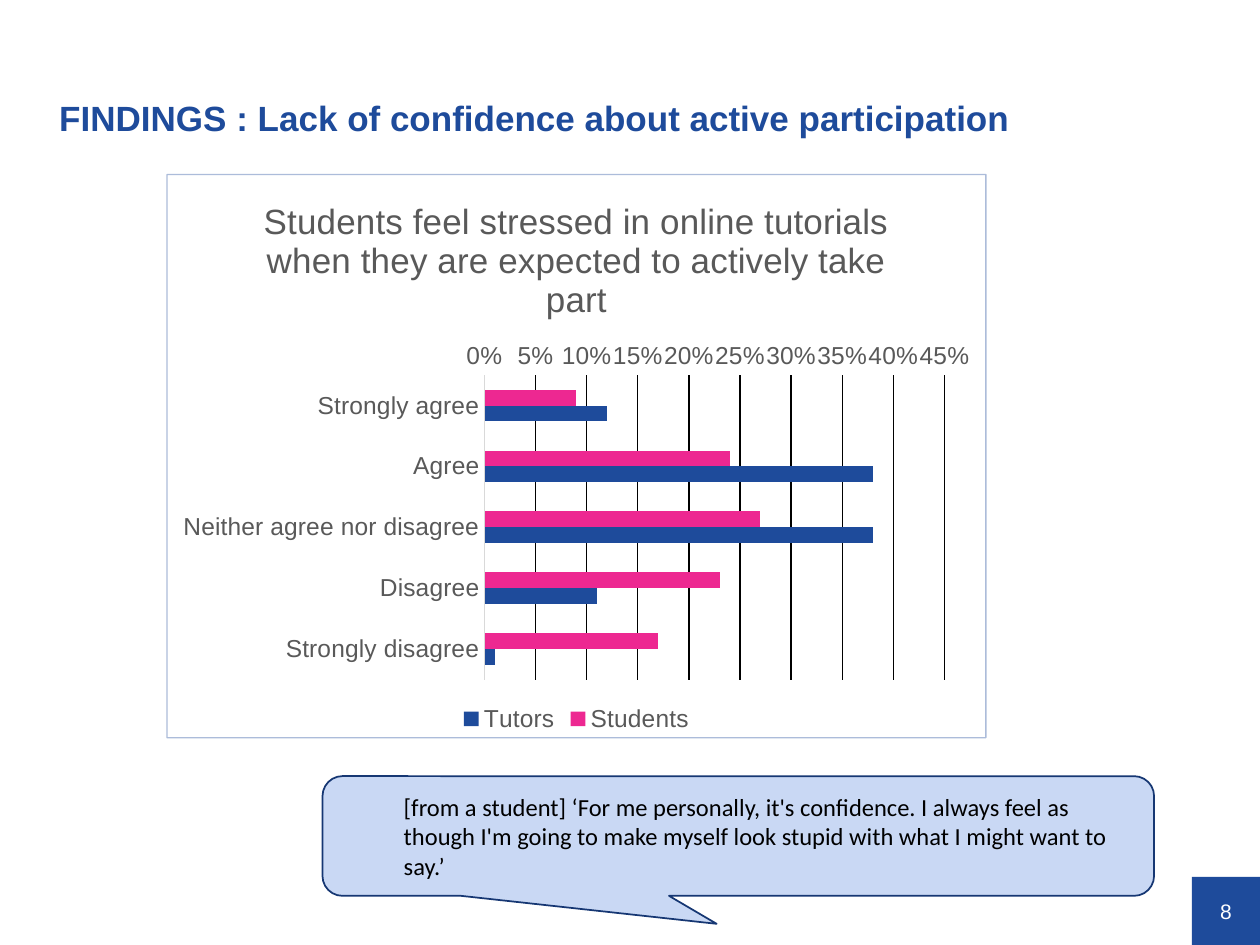
from lxml import etree
from pptx import Presentation
from pptx import util as u
from pptx.chart.data import CategoryChartData
from pptx.dml.color import RGBColor
from pptx.enum import chart as charts, shapes, text
from pptx.oxml import ns

COLORS = {
    "navy": "1E4B9B",
    "pink": "ED2891",
    "pale": "C9D8F4",
    "outline": "163773",
    "grey": "595959",
    "axis": "D9D9D9",
    "black": "000000",
    "white": "FFFFFF",
}
CATEGORIES = ["Strongly agree", "Agree", "Neither agree nor disagree", "Disagree", "Strongly disagree"]
SERIES = [
    ("Students", (0.09, 0.24, 0.27, 0.23, 0.17), "pink"),
    ("Tutors", (0.12, 0.38, 0.38, 0.11, 0.01), "navy"),
]


def color(name):
    return RGBColor.from_string(COLORS[name])


def box(left, top, width, height):
    return [u.Inches(value) for value in (left, top, width, height)]


def style_font(font, size, color_name, name="Arial", bold=False):
    font.size = u.Pt(size)
    font.name = name
    font.bold = bold
    font.color.rgb = color(color_name)


def style_line(line, color_name, width=0.75):
    line.color.rgb = color(color_name)
    line.width = u.Pt(width)


def set_margins(frame, left=0, top=0, right=0, bottom=0):
    frame.margin_left, frame.margin_top = u.Inches(left), u.Inches(top)
    frame.margin_right, frame.margin_bottom = u.Inches(right), u.Inches(bottom)


def write_text(frame, content, size, color_name, align, name="Arial", bold=False):
    frame.word_wrap = True
    frame.vertical_anchor = text.MSO_ANCHOR.MIDDLE
    paragraph = frame.paragraphs[0]
    paragraph.alignment = align
    run = paragraph.add_run()
    run.text = content
    style_font(run.font, size, color_name, name, bold)
    return paragraph


def set_title(slide, content):
    title = slide.shapes.title
    title.left, title.top, title.width, title.height = box(0.43, 0.8, 8.11, 0.28)
    frame = title.text_frame
    frame.auto_size = text.MSO_AUTO_SIZE.NONE
    set_margins(frame, left=0.04, top=0.02)
    paragraph = write_text(frame, content, 20, "navy", text.PP_ALIGN.LEFT, bold=True)
    paragraph.line_spacing = 0.9


def add_filled_shape(slide, kind, position, fill):
    shape = slide.shapes.add_shape(kind, *box(*position))
    shape.shadow.inherit = False
    shape.fill.solid()
    shape.fill.fore_color.rgb = color(fill)
    return shape


def add_page_number(slide, number):
    shape = add_filled_shape(slide, shapes.MSO_SHAPE.RECTANGLE, (9.46, 6.96, 0.54, 0.54), "navy")
    shape.line.fill.background()
    set_margins(shape.text_frame)
    write_text(shape.text_frame, number, 12, "white", text.PP_ALIGN.CENTER)


def add_quote(slide, content):
    shape = add_filled_shape(
        slide, shapes.MSO_SHAPE.ROUNDED_RECTANGULAR_CALLOUT, (2.56, 6.16, 6.6, 0.95), "pale")
    for index, value in enumerate((-0.026, 0.734, 0.167)):
        shape.adjustments[index] = value
    style_line(shape.line, "outline", 1)
    paragraph = write_text(shape.text_frame, content, 14, "black", text.PP_ALIGN.LEFT, "Calibri")
    paragraph.space_after = u.Pt(8)
    properties = paragraph._p.get_or_add_pPr()
    properties.set("marL", str(u.Inches(0.5)))
    properties.set("indent", "0")


def add_chart_border(chart, color_name, opacity):
    border = etree.fromstring(
        f'<c:spPr {ns.nsdecls("c", "a")}><a:noFill/><a:ln w="{u.Pt(0.75)}"><a:solidFill>'
        f'<a:srgbClr val="{COLORS[color_name]}"><a:alpha val="{opacity * 1000}"/></a:srgbClr>'
        '</a:solidFill></a:ln></c:spPr>')
    chart._chartSpace.find(ns.qn("c:chart")).addnext(border)


def format_axes(chart):
    for axis in (chart.category_axis, chart.value_axis):
        axis.major_tick_mark = charts.XL_TICK_MARK.NONE
        axis.minor_tick_mark = charts.XL_TICK_MARK.NONE
        style_font(axis.tick_labels.font, 14, "grey")
    chart.category_axis.reverse_order = True
    style_line(chart.category_axis.format.line, "axis")
    values = chart.value_axis
    values.minimum_scale, values.maximum_scale, values.major_unit = 0, 0.45, 0.05
    values.format.line.fill.background()
    values.has_major_gridlines = True
    style_line(values.major_gridlines.format.line, "black")
    values.tick_labels.number_format = "0%"
    values.tick_labels.number_format_is_linked = False


def add_survey_chart(slide, title):
    data = CategoryChartData(number_format="0%")
    data.categories = CATEGORIES
    for name, values, _ in SERIES:
        data.add_series(name, values)
    chart = slide.shapes.add_chart(
        charts.XL_CHART_TYPE.BAR_CLUSTERED, *box(1.32, 1.38, 6.51, 4.48), data).chart
    style_font(chart.font, 14, "black")

    chart.has_title = True
    run = chart.chart_title.text_frame.paragraphs[0].add_run()
    run.text = title
    style_font(run.font, 20, "grey")
    chart.chart_title.include_in_layout = False

    chart.has_legend = True
    chart.legend.position = charts.XL_LEGEND_POSITION.BOTTOM
    chart.legend.include_in_layout = False
    style_font(chart.legend.font, 14, "grey")

    plot = chart.plots[0]
    plot.gap_width = 182
    plot.vary_by_categories = False
    for series, (_, _, fill) in zip(plot.series, SERIES):
        series.invert_if_negative = False
        series.format.fill.solid()
        series.format.fill.fore_color.rgb = color(fill)
    format_axes(chart)
    add_chart_border(chart, "navy", 37)


def main():
    presentation = Presentation()
    presentation.slide_width = u.Inches(10)
    presentation.slide_height = u.Inches(7.5)
    slide = presentation.slides.add_slide(presentation.slide_layouts[5])
    add_page_number(slide, "8")
    set_title(slide, "FINDINGS : Lack of confidence about active participation")
    add_survey_chart(
        slide, "Students feel stressed in online tutorials when they are expected to actively take part")
    add_quote(
        slide,
        "[from a student] ‘For me personally, it's confidence. I always feel as though "
        "I'm going to make myself look stupid with what I might want to say.’")
    presentation.save("out.pptx")


if __name__ == "__main__":
    main()
